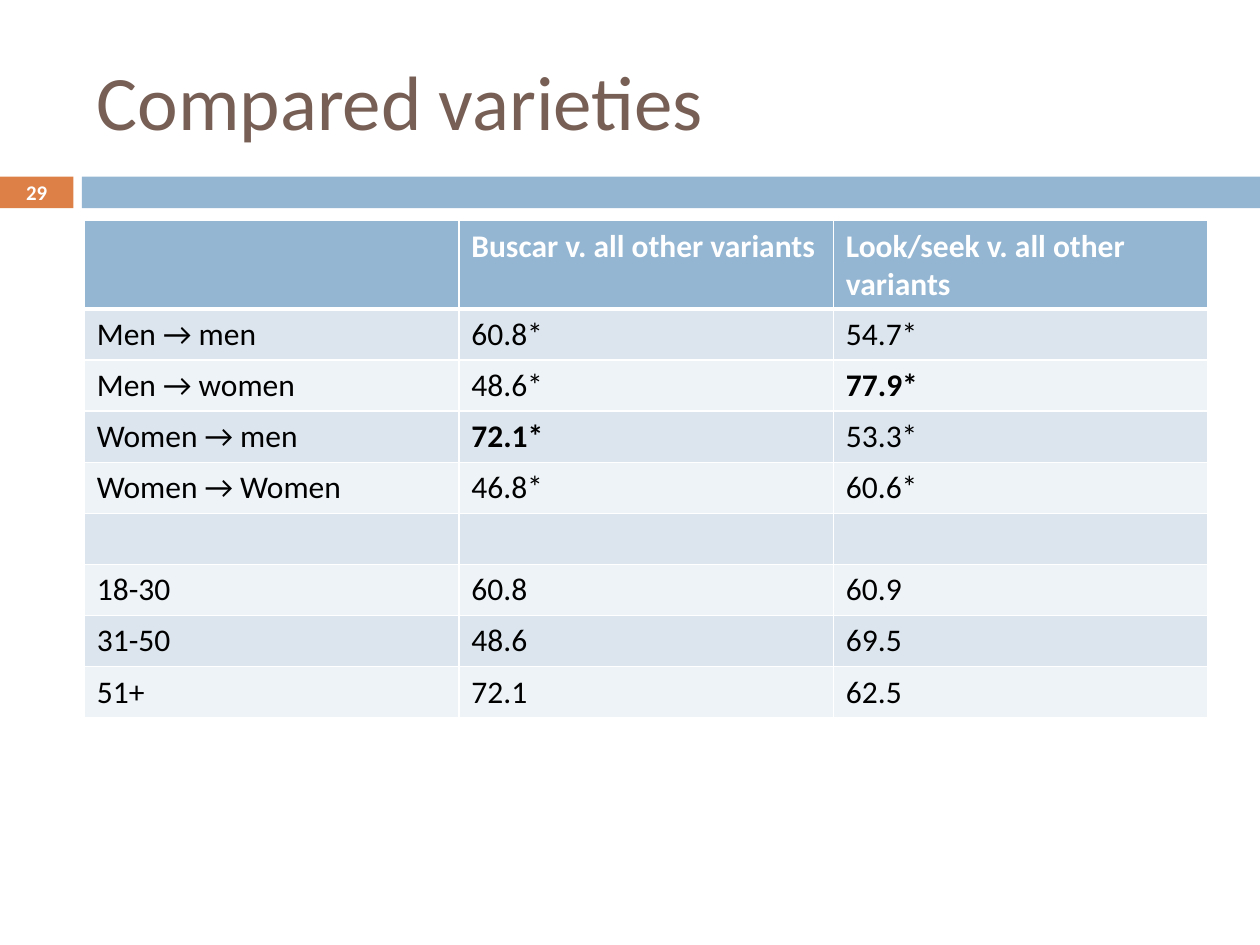
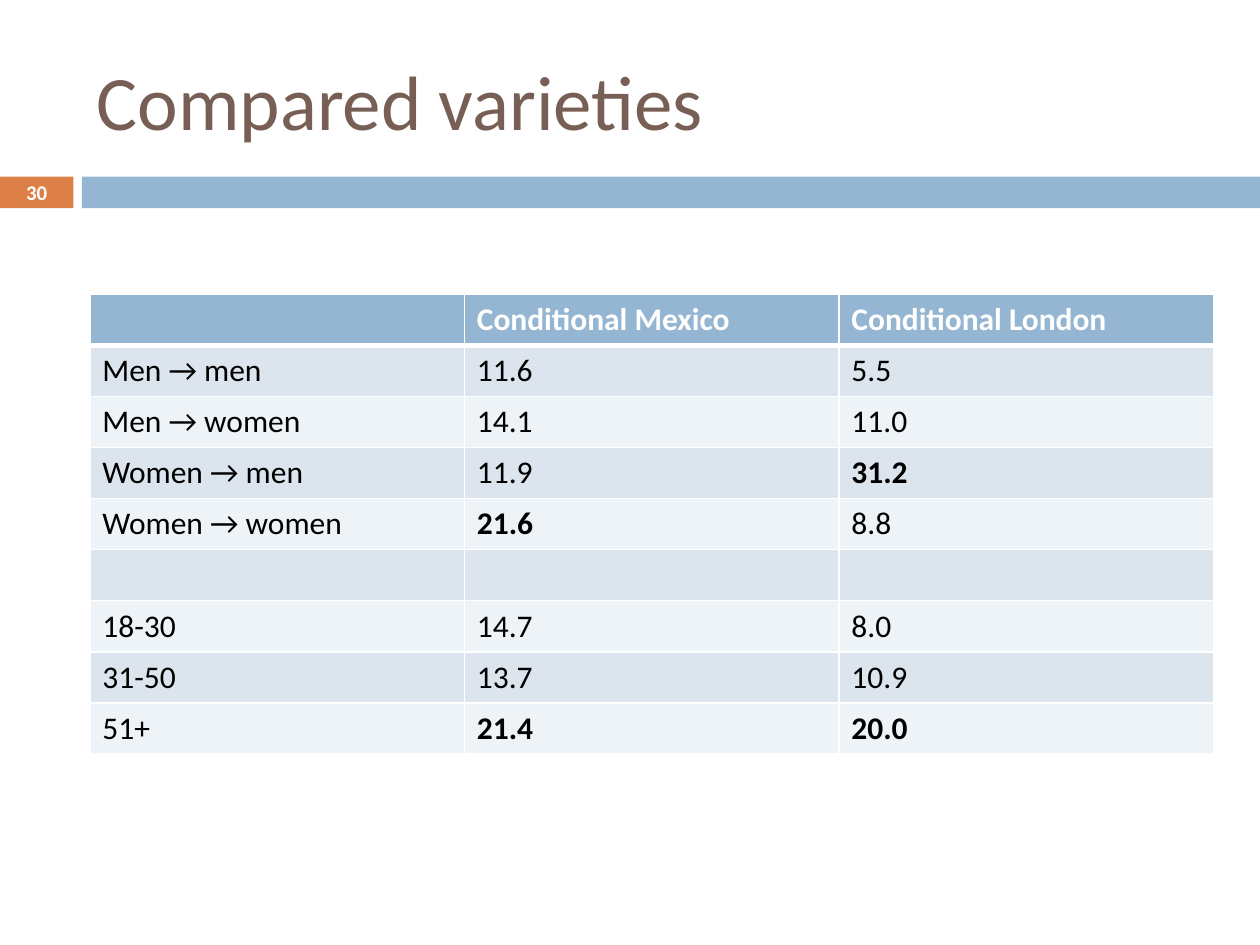
"""Build two slides comparing varieties by speaker, addressee and age."""
from lxml.etree import SubElement
from pptx import Presentation
from pptx.dml.color import RGBColor
from pptx.enum.shapes import MSO_SHAPE as Shape
from pptx.enum.text import MSO_ANCHOR as Anchor, PP_ALIGN as Align
from pptx.oxml.ns import qn
from pptx.util import Cm, Pt

FONT = "Calibri"
BROWN = RGBColor(0x77, 0x5F, 0x55)
ORANGE = RGBColor(0xDD, 0x80, 0x47)
BLUE = RGBColor(0x94, 0xB6, 0xD2)
BAND_DARK = RGBColor(0xDC, 0xE5, 0xEE)
BAND_LIGHT = RGBColor(0xEE, 0xF3, 0xF7)
WHITE = RGBColor(0xFF, 0xFF, 0xFF)
BLACK = RGBColor(0, 0, 0)

TITLE = "Compared varieties"
COLUMN_WIDTH, ROW_HEIGHT = Cm(7.55), Cm(1.03)

TABLES = [
    {
        "number": 29, "left": Cm(1.7), "top": Cm(4.45), "header_height": Cm(1.78),
        "bold": {"77.9*", "72.1*"},
        "rows": [
            ("", "Buscar v. all other variants", "Look/seek v. all other variants"),
            ("Men → men", "60.8*", "54.7*"),
            ("Men → women", "48.6*", "77.9*"),
            ("Women → men", "72.1*", "53.3*"),
            ("Women → Women", "46.8*", "60.6*"),
            ("", "", ""),
            ("18-30", "60.8", "60.9"),
            ("31-50", "48.6", "69.5"),
            ("51+", "72.1", "62.5"),
        ],
    },
    {
        "number": 30, "left": Cm(1.81), "top": Cm(5.93), "header_height": ROW_HEIGHT,
        "bold": {"31.2", "21.6", "21.4", "20.0"},
        "rows": [
            ("", "Conditional Mexico", "Conditional London"),
            ("Men → men", "11.6", "5.5"),
            ("Men → women", "14.1", "11.0"),
            ("Women → men", "11.9", "31.2"),
            ("Women → women", "21.6", "8.8"),
            ("", "", ""),
            ("18-30", "14.7", "8.0"),
            ("31-50", "13.7", "10.9"),
            ("51+", "21.4", "20.0"),
        ],
    },
]


def write_text(frame, text, size, color, bold=False, align=Align.LEFT):
    frame.text = text
    para = frame.paragraphs[0]
    para.alignment = align
    for span in para.runs:
        span.font.name = FONT
        span.font.size = Pt(size)
        span.font.bold = bold
        span.font.color.rgb = color


def add_borders(cell, top, bottom):
    properties = cell._tc.get_or_add_tcPr()
    for side, width in (("L", 1), ("R", 1), ("T", top), ("B", bottom)):
        line = SubElement(properties, qn(f"a:ln{side}"), w=str(Pt(width)))
        fill = SubElement(line, qn("a:solidFill"))
        SubElement(fill, qn("a:srgbClr"), val=str(WHITE))


deck = Presentation()
deck.slide_width, deck.slide_height = Cm(25.4), Cm(19.05)

for content in TABLES:
    page = deck.slides.add_slide(deck.slide_layouts[6])

    for left, width, color in ((0, 1.48, ORANGE), (1.65, 23.75, BLUE)):
        band = page.shapes.add_shape(Shape.RECTANGLE, Cm(left), Cm(3.56), Cm(width), Cm(0.64))
        band.shadow.inherit = False
        band.fill.solid()
        band.fill.fore_color.rgb = color
        band.line.fill.background()

    title_box = page.shapes.add_textbox(Cm(1.7), Cm(0.64), Cm(22.66), Cm(2.74))
    title_box.text_frame.word_wrap = True
    title_box.text_frame.vertical_anchor = Anchor.MIDDLE
    write_text(title_box.text_frame, TITLE, 44, BROWN)

    number_box = page.shapes.add_textbox(0, Cm(3.53), Cm(1.48), Cm(0.69))
    number_frame = number_box.text_frame
    number_frame.word_wrap = True
    number_frame.vertical_anchor = Anchor.MIDDLE
    number_frame.margin_left = number_frame.margin_right = 0
    number_frame.margin_top = number_frame.margin_bottom = 0
    write_text(number_frame, str(content["number"]), 11.9, WHITE, True, Align.CENTER)

    rows = content["rows"]
    height = content["header_height"] + ROW_HEIGHT * (len(rows) - 1)
    table = page.shapes.add_table(
        len(rows), 3, content["left"], content["top"], COLUMN_WIDTH * 3, height
    ).table
    for column in table.columns:
        column.width = COLUMN_WIDTH

    for row_index, values in enumerate(rows):
        header = row_index == 0
        table.rows[row_index].height = content["header_height"] if header else ROW_HEIGHT
        band_color = BLUE if header else BAND_DARK if row_index % 2 else BAND_LIGHT
        for column_index, value in enumerate(values):
            cell = table.cell(row_index, column_index)
            add_borders(cell, 3 if row_index == 1 else 1, 3 if header else 1)
            cell.fill.solid()
            cell.fill.fore_color.rgb = band_color
            write_text(cell.text_frame, value, 18, WHITE if header else BLACK,
                       header or value in content["bold"])

deck.save("out.pptx")
